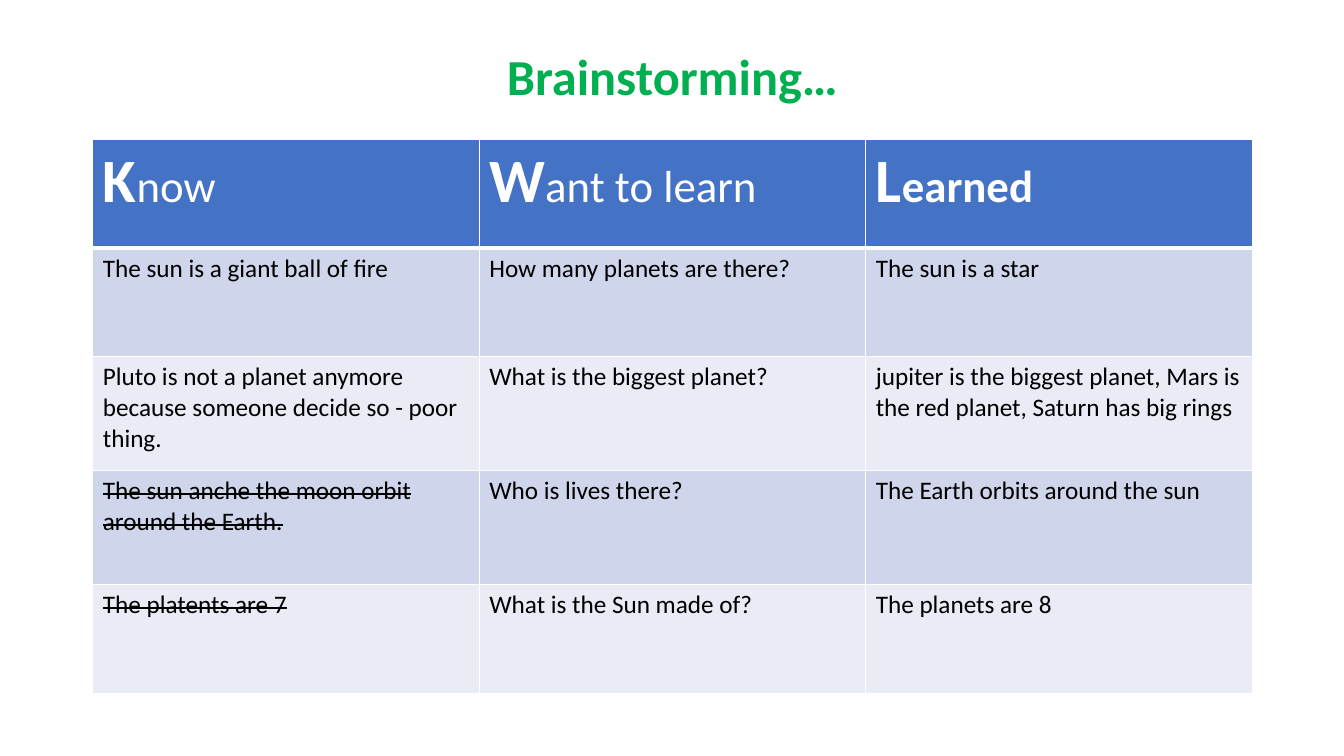
from lxml import etree
from pptx import Presentation
from pptx.dml.color import RGBColor
from pptx.enum.text import MSO_ANCHOR, PP_ALIGN
from pptx.oxml.ns import qn
from pptx.util import Inches, Pt

MIDDLE = MSO_ANCHOR.MIDDLE
CENTER = PP_ALIGN.CENTER
FONT = "Calibri"
WHITE, BLACK, GREEN, BLUE = "FFFFFF", "000000", "00B050", "4472C4"
BANDS = ["CFD5EA", "E9EBF5"]
HEIGHTS = [1.08, 1.08, 1.13, 1.13, 1.08]

# Each heading: large initial, remainder, whether the remainder is bold
HEADS = [("K", "now", False), ("W", "ant to learn", False), ("L", "earned", True)]
ROWS = [
    ["The sun is a giant ball of fire", "How many planets are there?",
     "The sun is a star"],
    ["Pluto is not a planet anymore because someone decide so - poor thing.",
     "What is the biggest planet?",
     "jupiter is the biggest planet, Mars is the red planet, Saturn has big rings"],
    ["The sun anche the moon orbit around the Earth.", "Who is lives there?",
     "The Earth orbits around the sun"],
    ["The platents are 7", "What is the Sun made of?", "The planets are 8"],
]
WRONG = {ROWS[2][0], ROWS[3][0]}  # ideas struck out


def rgb(color):
    return RGBColor.from_string(color)


def add_run(para, text, size, color, bold=False, strike=False):
    run = para.add_run()
    run.text = text
    font = run.font
    font.name, font.size, font.bold = FONT, Pt(size), bold
    font.color.rgb = rgb(color)
    if strike:
        run._r.get_or_add_rPr().set("strike", "sngStrike")


def add_title(slide, text):
    box = slide.shapes.add_textbox(
        Inches(0.92), Inches(0.4), Inches(11.5), Inches(0.78))
    frame = box.text_frame
    frame.word_wrap = True
    frame.vertical_anchor = MIDDLE
    para = frame.paragraphs[0]
    para.alignment = CENTER
    para.line_spacing = 0.9
    add_run(para, text, 36, GREEN, bold=True)


def style_cell(cell, color, top=1, bottom=1):
    """Set white borders, then the fill, in the order the XML schema needs."""
    props = cell._tc.get_or_add_tcPr()
    for side, width in zip("LRTB", (1, 1, top, bottom)):
        line = etree.SubElement(props, qn(f"a:ln{side}"), w=str(Pt(width)))
        fill = etree.SubElement(line, qn("a:solidFill"))
        etree.SubElement(fill, qn("a:srgbClr"), val=WHITE)
    cell.fill.solid()
    cell.fill.fore_color.rgb = rgb(color)


def add_grid(slide):
    grid = slide.shapes.add_table(
        len(HEIGHTS), len(HEADS), Inches(0.92), Inches(1.38),
        Inches(11.5), Inches(sum(HEIGHTS))).table
    for row, height in zip(grid.rows, HEIGHTS):
        row.height = Inches(height)
    for col, (first, rest, bold) in enumerate(HEADS):
        cell = grid.cell(0, col)
        style_cell(cell, BLUE, bottom=3)
        para = cell.text_frame.paragraphs[0]
        add_run(para, first, 44, WHITE, bold=True)
        add_run(para, rest, 32, WHITE, bold=bold)
    for row, texts in enumerate(ROWS, 1):
        for col, text in enumerate(texts):
            cell = grid.cell(row, col)
            style_cell(cell, BANDS[(row - 1) % 2], top=3 if row == 1 else 1)
            add_run(cell.text_frame.paragraphs[0], text, 18, BLACK,
                    strike=text in WRONG)


def main():
    deck = Presentation()
    deck.slide_width, deck.slide_height = Inches(13.33), Inches(7.5)
    slide = deck.slides.add_slide(deck.slide_layouts[6])
    add_title(slide, "Brainstorming…")
    add_grid(slide)
    deck.save("out.pptx")


if __name__ == "__main__":
    main()
